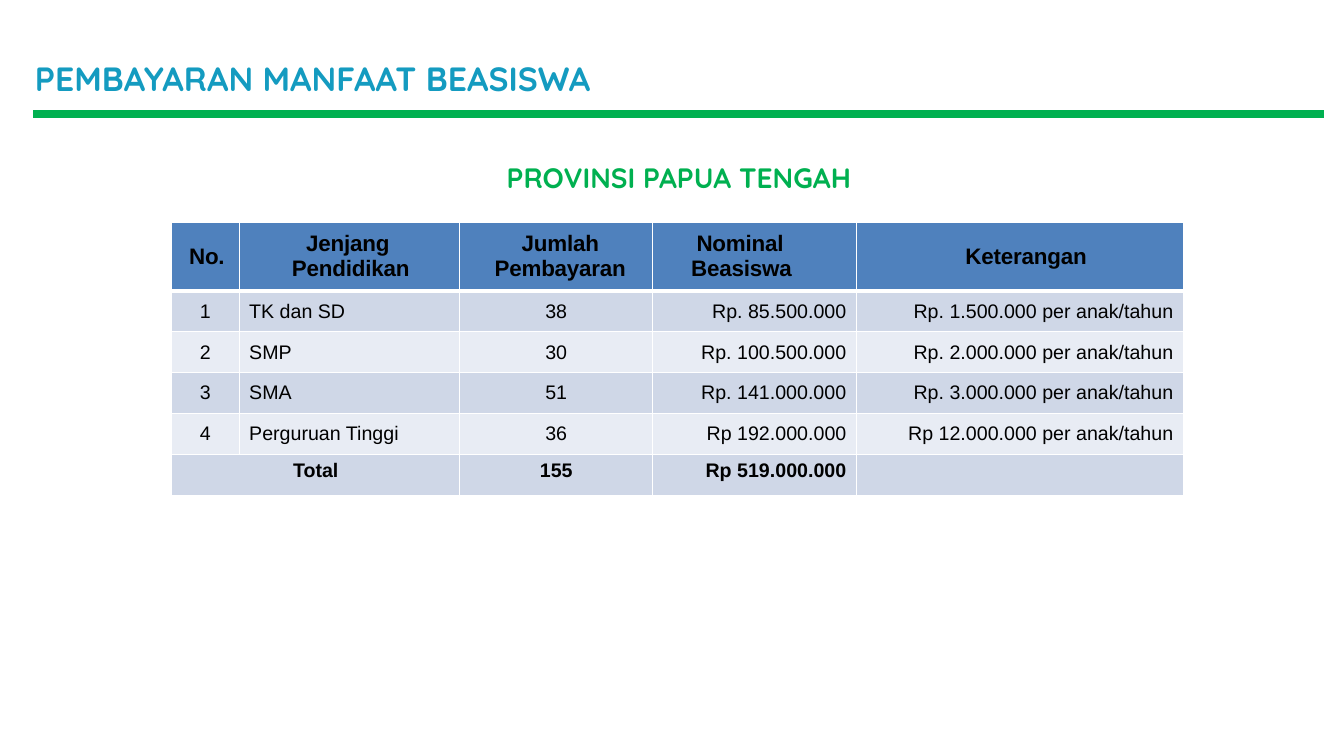
from dataclasses import dataclass

from lxml.etree import SubElement
from pptx import Presentation
from pptx.dml.color import RGBColor
from pptx.enum.shapes import MSO_CONNECTOR
from pptx.enum.text import MSO_ANCHOR, MSO_AUTO_SIZE, PP_ALIGN
from pptx.oxml.ns import qn
from pptx.shapes.base import BaseShape
from pptx.slide import Slide
from pptx.table import _Cell
from pptx.text.text import TextFrame, _Paragraph
from pptx.util import Pt


@dataclass(frozen=True)
class Theme:
    heading_font: str = "Quicksand"
    table_font: str = "Arial"
    blue: str = "149BC0"
    green: str = "00B050"
    header_fill: str = "4F81BD"
    bands: tuple[str, str] = ("CFD7E7", "E8ECF4")
    border: str = "FFFFFF"
    ink: str = "000000"
    title_size: float = 24
    subtitle_size: float = 20
    header_size: float = 16
    body_size: float = 14


@dataclass(frozen=True)
class Style:
    font: str
    size: float
    color: str
    bold: bool = False
    spacing: float = 0


@dataclass(frozen=True)
class Column:
    lines: tuple[str, ...]
    width: float
    align: PP_ALIGN
    left: float
    first: float
    right: float = 0
    spacing: float = -0.1


@dataclass(frozen=True)
class Heading:
    text: str
    left: float
    top: float
    height: float
    align: PP_ALIGN
    style: Style


THEME = Theme()
HEADER = Style(THEME.table_font, THEME.header_size, THEME.ink, True)
BODY = Style(THEME.table_font, THEME.body_size, THEME.ink)
TOTAL = Style(THEME.table_font, THEME.body_size, THEME.ink, True)

TITLE = Heading("PEMBAYARAN MANFAAT BEASISWA", 24, 40.3, 30.2, PP_ALIGN.LEFT,
                Style(THEME.heading_font, THEME.title_size, THEME.blue, True))
PROVINCE = Heading("PROVINSI PAPUA TENGAH", 185, 113.8, 25.2, PP_ALIGN.CENTER,
                   Style(THEME.heading_font, THEME.subtitle_size, THEME.green, True))
HEADING_WIDTH = 599

COLUMNS = (
    Column(("No.",), 48.2, PP_ALIGN.CENTER, 5.8, -3.6, spacing=-0.2),
    Column(("Jenjang ", "Pendidikan"), 157.7, PP_ALIGN.LEFT, 7.2, -2.2, 3),
    Column(("Jumlah Pembayaran",), 137.7, PP_ALIGN.CENTER, 5.8, 0),
    Column(("Nominal Beasiswa",), 145.7, PP_ALIGN.RIGHT, 9.4, -2.2, 28),
    Column(("Keterangan",), 233.7, PP_ALIGN.RIGHT, 54, -45.4),
)
LEVELS = (
    ("1", "TK dan SD", "38", "Rp. 85.500.000", "Rp. 1.500.000 per anak/tahun"),
    ("2", "SMP", "30", "Rp. 100.500.000", "Rp. 2.000.000 per anak/tahun"),
    ("3", "SMA", "51", "Rp. 141.000.000", "Rp. 3.000.000 per anak/tahun"),
    ("4", "Perguruan Tinggi", "36", "Rp 192.000.000", "Rp 12.000.000 per anak/tahun"),
)
TOTALS = ("Total", "", "155", "Rp 519.000.000", "")
HEADER_HEIGHT = 49
ROW_HEIGHT = 29.2


def add_span(para: _Paragraph, text: str, style: Style) -> None:
    span = para.add_run()
    span.text = text
    span.font.name = style.font
    span.font.size = Pt(style.size)
    span.font.bold = style.bold
    span.font.color.rgb = RGBColor.from_string(style.color)
    if style.spacing:
        span._r.get_or_add_rPr().set("spc", str(round(style.spacing * 100)))


def indent(para: _Paragraph, left: float, first: float = 0, right: float = 0) -> None:
    properties = para._p.get_or_add_pPr()
    for name, value in (("marL", left), ("marR", right), ("indent", first)):
        properties.set(name, str(int(Pt(value))))


def write_heading(box: BaseShape, heading: Heading) -> None:
    box.left, box.top = Pt(heading.left), Pt(heading.top)
    box.width, box.height = Pt(HEADING_WIDTH), Pt(heading.height)
    frame: TextFrame = box.text_frame
    frame.word_wrap = True
    frame.auto_size = MSO_AUTO_SIZE.SHAPE_TO_FIT_TEXT
    frame.vertical_anchor = MSO_ANCHOR.TOP
    frame.margin_left = frame.margin_right = frame.margin_bottom = 0
    frame.margin_top = Pt(0.9)
    para = frame.paragraphs[0]
    para.alignment = heading.align
    para.line_spacing = 1.0
    para.space_before = Pt(0)
    indent(para, 0.9)
    add_span(para, heading.text, heading.style)


def paint_cell(cell: _Cell, fill: str, top: float = 1, bottom: float = 1) -> None:
    properties = cell._tc.get_or_add_tcPr()
    for side, width in (("L", 1), ("R", 1), ("T", top), ("B", bottom)):
        line = SubElement(properties, qn(f"a:ln{side}"), w=str(int(Pt(width))))
        solid = SubElement(line, qn("a:solidFill"))
        SubElement(solid, qn("a:srgbClr"), val=THEME.border)
    cell.fill.solid()
    cell.fill.fore_color.rgb = RGBColor.from_string(fill)


def write_header(cell: _Cell, column: Column) -> None:
    paint_cell(cell, THEME.header_fill, bottom=3)
    cell.vertical_anchor = MSO_ANCHOR.MIDDLE
    cell.margin_left = cell.margin_right = cell.margin_top = cell.margin_bottom = 0
    style = Style(HEADER.font, HEADER.size, HEADER.color, HEADER.bold, column.spacing)
    frame = cell.text_frame
    for number, text in enumerate(column.lines):
        para = frame.add_paragraph() if number else frame.paragraphs[0]
        para.alignment = PP_ALIGN.CENTER
        indent(para, column.left, column.first, column.right)
        add_span(para, text, style)


def add_benefit_table(page: Slide) -> None:
    body_rows = (*LEVELS, TOTALS)
    width = sum(column.width for column in COLUMNS)
    height = HEADER_HEIGHT + ROW_HEIGHT * len(body_rows)
    table = page.shapes.add_table(len(body_rows) + 1, len(COLUMNS), Pt(122.6), Pt(158.8),
                                  Pt(width), Pt(height)).table
    for number, column in enumerate(COLUMNS):
        table.columns[number].width = Pt(column.width)
        write_header(table.cell(0, number), column)
    table.rows[0].height = Pt(HEADER_HEIGHT)

    for row, texts in enumerate(body_rows, start=1):
        table.rows[row].height = Pt(ROW_HEIGHT)
        is_total = texts is TOTALS
        for number, (column, text) in enumerate(zip(COLUMNS, texts)):
            cell = table.cell(row, number)
            paint_cell(cell, THEME.bands[(row - 1) % 2], top=3 if row == 1 else 1)
            cell.vertical_anchor = MSO_ANCHOR.TOP if is_total else MSO_ANCHOR.MIDDLE
            if text:
                para = cell.text_frame.paragraphs[0]
                para.alignment = column.align
                add_span(para, text, TOTAL if is_total else BODY)
    last = len(body_rows)
    table.cell(last, 0).merge(table.cell(last, 1))


def add_rule(page: Slide) -> None:
    rule = page.shapes.add_connector(MSO_CONNECTOR.STRAIGHT, Pt(23.8), Pt(81.4),
                                     Pt(945.4), Pt(81.4))
    rule.line.color.rgb = RGBColor.from_string(THEME.green)
    rule.line.width = Pt(6)
    SubElement(rule._element.spPr, qn("a:effectLst"))


def main() -> None:
    deck = Presentation()
    deck.slide_width, deck.slide_height = Pt(960), Pt(540)
    page = deck.slides.add_slide(deck.slide_layouts[5])
    add_rule(page)
    add_benefit_table(page)
    write_heading(page.shapes.title, TITLE)
    write_heading(page.shapes.add_textbox(0, 0, 0, 0), PROVINCE)
    deck.save("out.pptx")


if __name__ == "__main__":
    main()
